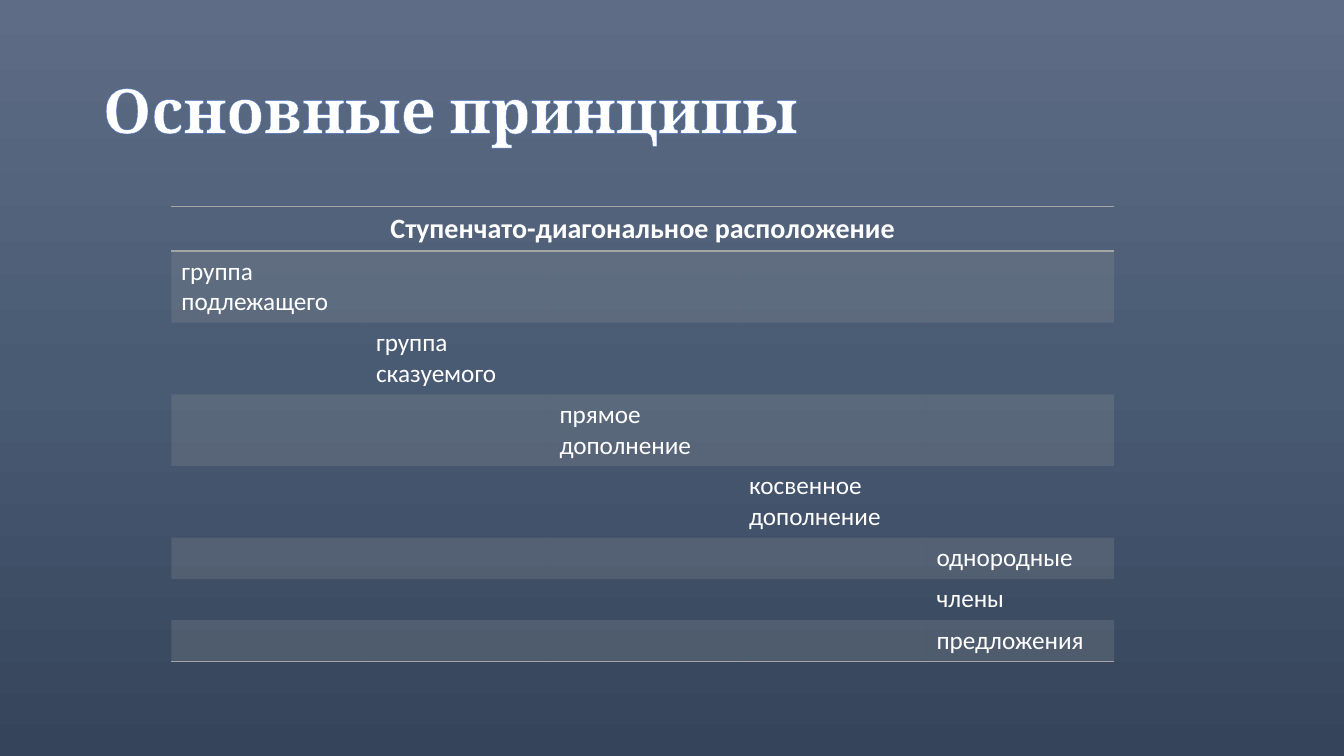
from copy import deepcopy
from dataclasses import dataclass

from lxml import etree
from pptx import Presentation
from pptx.dml.color import RGBColor
from pptx.enum.text import MSO_ANCHOR, MSO_AUTO_SIZE, PP_ALIGN
from pptx.oxml.ns import qn
from pptx.util import Pt

PX = 9144
LEFT, CENTER = PP_ALIGN.LEFT, PP_ALIGN.CENTER
MIDDLE = MSO_ANCHOR.MIDDLE
NO_FIT = MSO_AUTO_SIZE.NONE
PLAIN = "{2D5ABB26-0587-4C30-8999-92F81FD0307C}"


@dataclass(frozen=True)
class Theme:
    sky: tuple = ((0, "5E6D85"), (0.5, "495A73"), (1, "35445A"))
    ink: str = "FFFFFF"
    edge: str = "4472C4"
    band: str = "A5A5A5"
    alpha: int = 20
    head: str = "Cambria"
    body: str = "Calibri"
    title: int = 44
    top: int = 20
    cell: int = 18


THEME = Theme()
TITLE = "Основные принципы"
HEAD = "Ступенчато-диагональное расположение"
STEPS = (
    "группа подлежащего",
    "группа сказуемого",
    "прямое дополнение",
    "косвенное дополнение",
    "однородные",
    "члены",
    "предложения",
)
COLS = (193, 182, 188, 186, 186)
ROWS = (33,) + (41,) * len(STEPS)


def px(*sizes):
    return [size * PX for size in sizes]


def place(shape, *box):
    shape.left, shape.top, shape.width, shape.height = px(*box)


def write(frame, text, face, size, bold, align=LEFT):
    frame.text = text
    para = frame.paragraphs[0]
    para.alignment = align
    font = para.runs[0].font
    font.name, font.size, font.bold = face, Pt(size), bold
    font.color.rgb = RGBColor.from_string(THEME.ink)
    return para


def line(tag, width, color):
    node = etree.Element(qn(tag), w=str(Pt(width)))
    fill = etree.SubElement(node, qn("a:solidFill"))
    etree.SubElement(fill, qn("a:srgbClr"), val=color)
    return node


def add_sky(slide):
    fill = slide.background.fill
    fill.gradient()
    fill.gradient_angle = 270
    stops = slide.element.find(".//" + qn("a:gsLst"))
    stops.append(deepcopy(stops[0]))
    for stop, (spot, color) in zip(fill.gradient_stops, THEME.sky):
        stop.position = spot
        stop.color.rgb = RGBColor.from_string(color)


def add_title(slide):
    title = slide.shapes.title
    place(title, 92, 40, 1150, 145)
    frame = title.text_frame
    frame.auto_size = NO_FIT
    frame.vertical_anchor = MIDDLE
    para = write(frame, TITLE, THEME.head, THEME.title, True)
    para.line_spacing = 0.9
    props = para.runs[0].font._element
    props.insert(0, line("a:ln", 0.8, THEME.edge))


def paint(cell, sides, shade):
    props = cell._tc.get_or_add_tcPr()
    for side in sides:
        props.append(line("a:ln" + side, 1, THEME.band))
    if not shade:
        cell.fill.background()
        return
    cell.fill.solid()
    cell.fill.fore_color.rgb = RGBColor.from_string(THEME.band)
    color = props.find(".//" + qn("a:srgbClr") + "[last()]")
    color = props.find(qn("a:solidFill")).find(qn("a:srgbClr"))
    etree.SubElement(color, qn("a:alpha"), val=str(THEME.alpha * 1000))


def add_steps(slide):
    box = 170, 205, sum(COLS), 445
    holder = slide.shapes.add_table(len(ROWS), len(COLS), *px(*box))
    table = holder.table
    table.first_row = table.horz_banding = False
    table._tbl.tblPr.find(qn("a:tableStyleId")).text = PLAIN
    for col, width in zip(table.columns, COLS):
        col.width = width * PX
    for row, height in zip(table.rows, ROWS):
        row.height = height * PX
    place(holder, *box)
    edges = {0: "TB", len(STEPS): "B"}
    for at, row in enumerate(table.rows):
        for cell in row.cells:
            paint(cell, edges.get(at, ""), at % 2)
    top = table.cell(0, 0)
    top.merge(table.cell(0, len(COLS) - 1))
    write(top.text_frame, HEAD, THEME.body, THEME.top, True, CENTER)
    for at, step in enumerate(STEPS):
        cell = table.cell(at + 1, min(at, len(COLS) - 1))
        write(cell.text_frame, step, THEME.body, THEME.cell, False)


def main():
    deck = Presentation()
    deck.slide_width, deck.slide_height = px(1333, 750)
    slide = deck.slides.add_slide(deck.slide_layouts[5])
    add_sky(slide)
    add_title(slide)
    add_steps(slide)
    deck.save("out.pptx")


if __name__ == "__main__":
    main()
